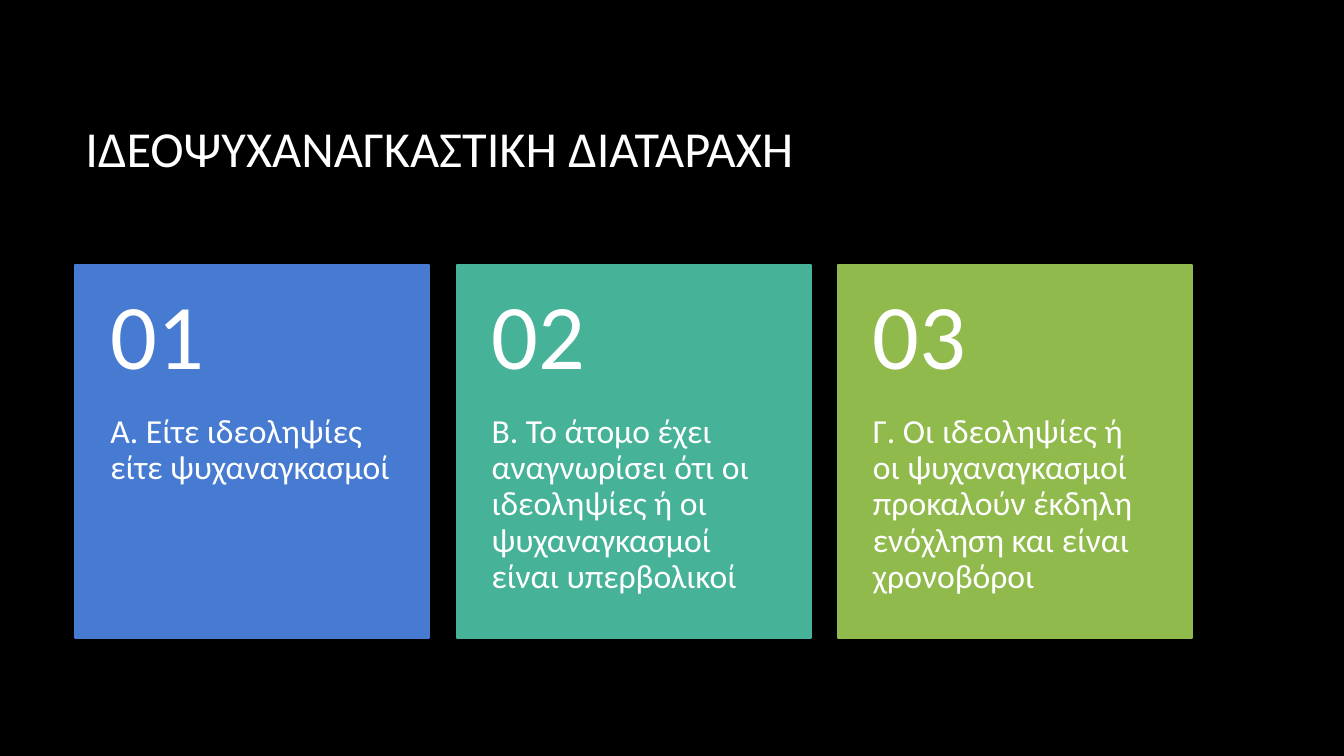
from pptx import Presentation
from pptx.dml.color import RGBColor
from pptx.enum import shapes, text
from pptx.util import Cm, Pt

BLACK = RGBColor(0x00, 0x00, 0x00)
WHITE = RGBColor(0xFF, 0xFF, 0xFF)
BLUE = RGBColor(0x47, 0x7B, 0xD1)
TEAL = RGBColor(0x46, 0xB2, 0x98)
GREEN = RGBColor(0x90, 0xBA, 0x4C)

LEFT, CARD_TOP = 1.9, 6.68
CARD_WIDTH, CARD_HEIGHT, CARD_PITCH = 8.92, 9.4, 9.61
NUMBER_SHARE = 0.4

CRITERIA = [
    (BLUE, "Α. Είτε ιδεοληψίες είτε ψυχαναγκασμοί"),
    (TEAL, "Β. Το άτομο έχει αναγνωρίσει ότι οι ιδεοληψίες ή οι "
           "ψυχαναγκασμοί είναι υπερβολικοί"),
    (GREEN, "Γ. Οι ιδεοληψίες ή οι ψυχαναγκασμοί προκαλούν έκδηλη "
            "ενόχληση και είναι χρονοβόροι"),
]


def write(frame, wording, size, spacing, **frame_format):
    """Fill a text frame with one white, left-aligned paragraph."""
    for name, value in {"word_wrap": True, **frame_format}.items():
        setattr(frame, name, value)
    paragraph = frame.paragraphs[0]
    paragraph.alignment = text.PP_ALIGN.LEFT
    paragraph.line_spacing = spacing
    run = paragraph.add_run()
    run.text = wording
    for name, value in {"name": "Calibri", "size": Pt(size)}.items():
        setattr(run.font, name, value)
    run.font.color.rgb = WHITE


def add_heading(slide, left, top, width, height):
    """Place the slide title in the given box, in centimetres."""
    heading = slide.shapes.title
    box = {"left": left, "top": top, "width": width, "height": height}
    for name, value in box.items():
        setattr(heading, name, Cm(value))
    write(heading.text_frame, "ΙΔΕΟΨΥΧΑΝΑΓΚΑΣΤΙΚΗ ΔΙΑΤΑΡΑΧΗ", 36, 1.0,
          vertical_anchor=text.MSO_ANCHOR.MIDDLE)


def add_card(slide, left, top, width, height, number, colour, criterion):
    """Draw a coloured card with its number above its criterion."""
    card = slide.shapes.add_shape(shapes.MSO_SHAPE.RECTANGLE,
                                  Cm(left), Cm(top), Cm(width), Cm(height))
    card.shadow.inherit = False
    card.fill.solid()
    card.fill.fore_color.rgb = colour
    card.line.color.rgb = colour
    card.line.width = Pt(1.5)

    number_height = height * NUMBER_SHARE
    sides = {"margin_left": Cm(0.88), "margin_right": Cm(0.88)}
    body = slide.shapes.add_textbox(Cm(left), Cm(top + number_height),
                                    Cm(width), Cm(height - number_height))
    write(body.text_frame, criterion, 24, 0.9, **sides,
          margin_top=0, margin_bottom=Cm(0.91),
          vertical_anchor=text.MSO_ANCHOR.TOP)
    numeral = slide.shapes.add_textbox(Cm(left), Cm(top),
                                       Cm(width), Cm(number_height))
    write(numeral.text_frame, f"{number:02d}", 66, 0.9, **sides,
          margin_top=Cm(0.46), margin_bottom=Cm(0.46),
          vertical_anchor=text.MSO_ANCHOR.MIDDLE)


def main():
    """Build the slide and save it."""
    deck = Presentation()
    deck.slide_width, deck.slide_height = Cm(33.87), Cm(19.05)
    slide = deck.slides.add_slide(deck.slide_layouts[5])
    slide.background.fill.solid()
    slide.background.fill.fore_color.rgb = BLACK
    add_heading(slide, LEFT, 1.7, 28.14, 4.04)
    for index, (colour, criterion) in enumerate(CRITERIA):
        add_card(slide, LEFT + index * CARD_PITCH, CARD_TOP, CARD_WIDTH,
                 CARD_HEIGHT, index + 1, colour, criterion)
    deck.save("out.pptx")


if __name__ == "__main__":
    main()
